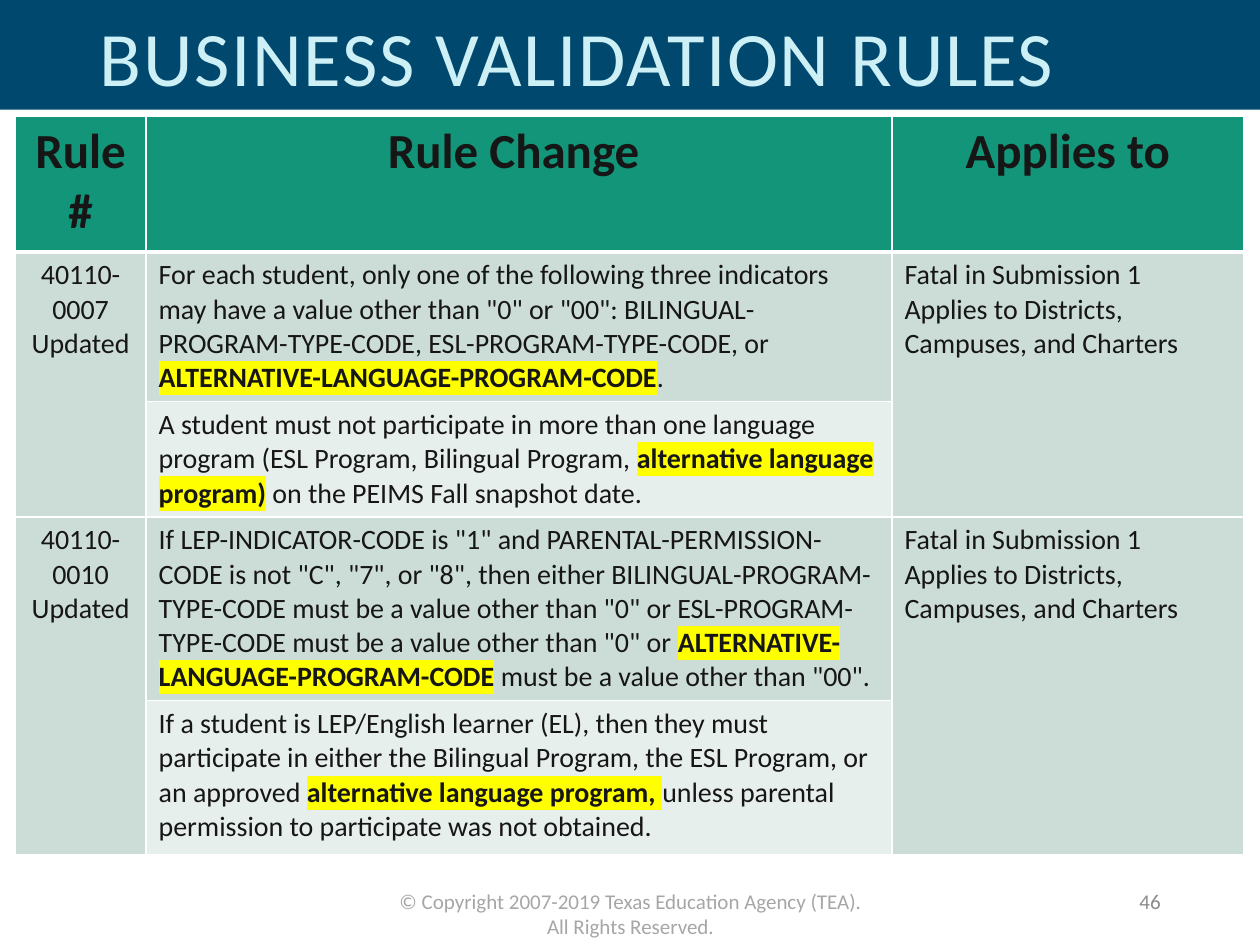
from lxml.etree import SubElement
from pptx import Presentation
from pptx.dml.color import RGBColor
from pptx.enum.shapes import MSO_SHAPE as Shape
from pptx.enum.text import MSO_ANCHOR as Anchor, MSO_AUTO_SIZE as AutoSize, PP_ALIGN as Align
from pptx.oxml.ns import qn
from pptx.util import Pt

SCALE = 9144
COLORS = {
    "banner": "00486E", "title": "CCF0F5", "header": "129579", "text": "171616",
    "band": "CCDDD7", "light": "E7EFEC", "line": "FFFFFF", "highlight": "FFFF00",
    "footer": "A6A6A6", "number": "8C8C8C",
}
COLUMN_WIDTHS = [104, 592, 279]
ROW_HEIGHTS = [108, 98, 86, 143, 122]
HEADERS = ["Rule #", "Rule Change ", "Applies to"]
APPLIES_TO = "Fatal in Submission 1\nApplies to Districts, Campuses, and Charters"
RULES = [
    ("40110-0007 Updated", [
        'For each student, only one of the following three indicators may have a value '
        'other than "0" or "00": BILINGUAL-PROGRAM-TYPE-CODE, ESL-PROGRAM-TYPE-CODE, or '
        '*ALTERNATIVE-LANGUAGE-PROGRAM-CODE*.',
        'A student must not participate in more than one language program (ESL Program, '
        'Bilingual Program, *alternative language program)* on the PEIMS Fall snapshot date.',
    ]),
    ("40110-0010 Updated", [
        'If LEP-INDICATOR-CODE is "1" and PARENTAL-PERMISSION-CODE is not "C", "7", or "8", '
        'then either BILINGUAL-PROGRAM-TYPE-CODE must be a value other than "0" or '
        'ESL-PROGRAM-TYPE-CODE must be a value other than "0" or '
        '*ALTERNATIVE-LANGUAGE-PROGRAM-CODE* must be a value other than "00".',
        'If a student is LEP/English learner (EL), then they must participate in either the '
        'Bilingual Program, the ESL Program, or an approved *alternative language program, *'
        'unless parental permission to participate was not obtained.',
    ]),
]


def px(*lengths):
    return [length * SCALE for length in lengths]


def color(name):
    return RGBColor.from_string(COLORS[name])


def format_run(run, size, color_name, bold=False):
    run.font.size = Pt(size)
    run.font.bold = bold
    run.font.name = "Calibri"
    run.font.color.rgb = color(color_name)


def highlight(run):
    properties = run.font._element
    mark = SubElement(properties, qn("a:highlight"))
    SubElement(mark, qn("a:srgbClr"), val=COLORS["highlight"])
    properties.find(qn("a:solidFill")).addnext(mark)


def add_banner(slide):
    shape = slide.shapes.add_shape(Shape.RECTANGLE, *px(0, 0, 1000, 87))
    shape.shadow.inherit = False
    shape.fill.solid()
    shape.fill.fore_color.rgb = color("banner")
    shape.line.fill.background()
    slide.shapes._spTree.insert(2, shape._element)


def fill_title(slide, text):
    title = slide.shapes.title
    title.left, title.top, title.width, title.height = px(69, 5, 800, 87)
    frame = title.text_frame
    frame.text = text
    frame.auto_size = AutoSize.NONE
    frame.vertical_anchor = Anchor.MIDDLE
    paragraph = frame.paragraphs[0]
    paragraph.alignment = Align.LEFT
    paragraph.line_spacing = 0.9
    run = paragraph.runs[0]
    format_run(run, 44, "title")
    run.font._element.set("spc", "100")


def add_label(slide, box, text, color_name, align, anchor):
    frame = slide.shapes.add_textbox(*px(*box)).text_frame
    frame.word_wrap = True
    frame.vertical_anchor = anchor
    frame.text = text
    frame.paragraphs[0].alignment = align
    format_run(frame.paragraphs[0].runs[0], 12, color_name)


def style_cell(cell, fill, top=1, bottom=1):
    cell.fill.solid()
    cell.fill.fore_color.rgb = color(fill)
    properties = cell._tc.get_or_add_tcPr()
    for index, (side, width) in enumerate(zip("LRTB", (1, 1, top, bottom))):
        line = SubElement(properties, qn(f"a:ln{side}"), w=str(Pt(width)))
        SubElement(SubElement(line, qn("a:solidFill")), qn("a:srgbClr"), val=COLORS["line"])
        properties.insert(index, line)


def write_cell(cell, text, align=Align.LEFT, size=16, bold=False):
    frame = cell.text_frame
    frame.text = text.replace("*", "")
    for paragraph, line in zip(frame.paragraphs, text.split("\n")):
        paragraph.alignment = align
        parts = line.split("*")
        paragraph.runs[0].text = parts[0]
        for part in parts[1:]:
            paragraph.add_run().text = part
        for index, run in enumerate(paragraph.runs):
            marked = index % 2 == 1
            format_run(run, size, "text", bold or marked)
            if marked:
                highlight(run)


def add_rules_table(slide):
    size = px(12, 92, sum(COLUMN_WIDTHS), sum(ROW_HEIGHTS))
    table = slide.shapes.add_table(len(ROW_HEIGHTS), len(COLUMN_WIDTHS), *size).table
    for column, width in zip(table.columns, px(*COLUMN_WIDTHS)):
        column.width = width
    for row, height in zip(table.rows, px(*ROW_HEIGHTS)):
        row.height = height
    for column, header in enumerate(HEADERS):
        cell = table.cell(0, column)
        style_cell(cell, "header", bottom=3)
        write_cell(cell, header, Align.CENTER, 28, True)
        cell.text_frame.paragraphs[0].space_after = Pt(6)
        for row in range(1, len(ROW_HEIGHTS)):
            fill = "band" if row % 2 else "light"
            style_cell(table.cell(row, column), fill, top=3 if row == 1 else 1)
    for index, (number, changes) in enumerate(RULES):
        first = 1 + 2 * index
        for column in (0, 2):
            table.cell(first, column).merge(table.cell(first + 1, column))
        write_cell(table.cell(first, 0), number, Align.CENTER)
        write_cell(table.cell(first, 2), APPLIES_TO)
        for offset, change in enumerate(changes):
            write_cell(table.cell(first + offset, 1), change)


def main():
    presentation = Presentation()
    presentation.slide_width, presentation.slide_height = px(1000, 750)
    slide = presentation.slides.add_slide(presentation.slide_layouts[5])
    add_banner(slide)
    fill_title(slide, "BUSINESS VALIDATION RULES")
    add_rules_table(slide)
    add_label(slide, (304, 700, 393, 30),
              "© Copyright 2007-2019 Texas Education Agency (TEA). All Rights Reserved.",
              "footer", Align.CENTER, Anchor.TOP)
    add_label(slide, (706, 695, 225, 40), "46", "number", Align.RIGHT, Anchor.MIDDLE)
    presentation.save("out.pptx")


if __name__ == "__main__":
    main()
